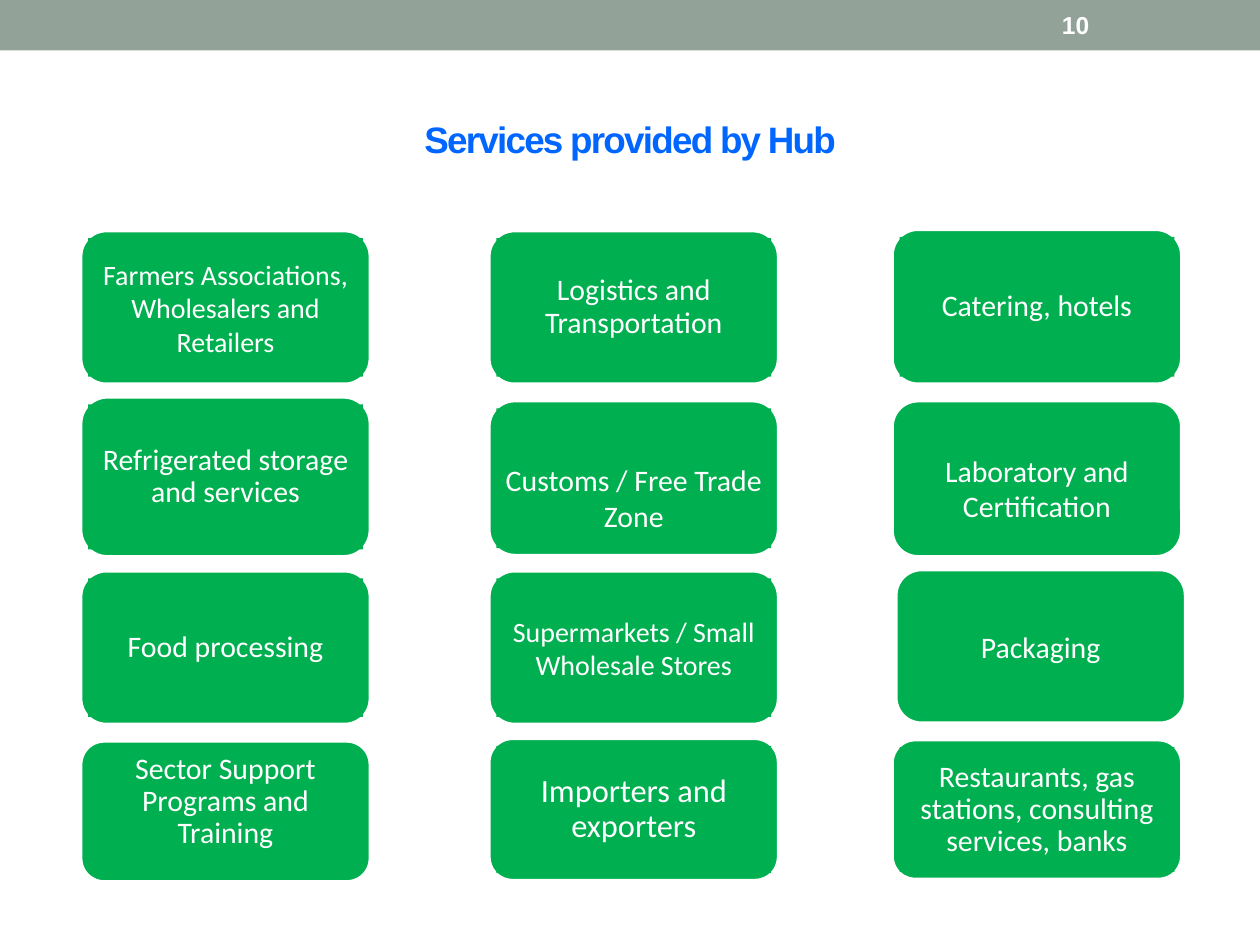
from dataclasses import dataclass

from pptx import Presentation
from pptx.dml.color import RGBColor
from pptx.enum.shapes import MSO_SHAPE
from pptx.enum.text import MSO_ANCHOR, PP_ALIGN
from pptx.util import Inches, Pt

GREEN, WHITE, GREY, BLUE = "00B050", "FFFFFF", "93A299", "0066FF"
WIDTH = 2.3
INSET = 0.06
LEFT, MID, RIGHT = 0.64, 3.88, 7.08


@dataclass
class Card:
    text: str
    left: float
    top: float
    height: float
    size: float = 17
    spacing: float = 0.9
    panel: bool = True  # text sits on an inner panel, centred
    margin: float = 0.03  # space above the text


CARDS = [
    Card("Farmers Associations, Wholesalers and Retailers", LEFT, 1.83, 1.22, 16, 1),
    Card("Refrigerated storage and services", LEFT, 3.15, 1.27),
    Card("Food processing", LEFT, 4.53, 1.22),
    Card("Sector Support Programs and Training", LEFT, 5.88, 1.12,
         panel=False, margin=0.05),
    Card("Logistics and Transportation", MID, 1.83, 1.22),
    Card("Customs / Free Trade Zone", MID, 3.18, 1.23, spacing=1, margin=0.34),
    Card("Supermarkets / Small Wholesale Stores", MID, 4.53, 1.22, 16, 1),
    Card("Importers and exporters", MID, 5.86, 1.13, 18.5),
    Card("Catering, hotels", RIGHT, 1.82, 1.23),
    Card("Laboratory and Certification", RIGHT, 3.18, 1.24, spacing=1,
         panel=False, margin=0.35),
    Card("Packaging", 7.11, 4.52, 1.22, panel=False, margin=0.44),
    Card("Restaurants, gas stations, consulting services, banks",
         RIGHT, 5.87, 1.11),
]


def color(value: str) -> RGBColor:
    return RGBColor.from_string(value)


def style(para, size: float, face: str, shade: str, bold: bool = False) -> None:
    for run in para.runs:
        font = run.font
        font.size, font.name, font.bold = Pt(size), face, bold
        font.color.rgb = color(shade)


def add_box(slide, kind, left: float, top: float, width: float, height: float,
            fill: str, line: bool = False):
    box = slide.shapes.add_shape(
        kind, Inches(left), Inches(top), Inches(width), Inches(height))
    box.shadow.inherit = False
    box.fill.solid()
    box.fill.fore_color.rgb = color(fill)
    if line:
        box.line.color.rgb = color(WHITE)
        box.line.width = Pt(2.08)
    else:
        box.line.fill.background()
    return box


def add_card(slide, card: Card) -> None:
    box = add_box(slide, MSO_SHAPE.ROUNDED_RECTANGLE, card.left, card.top,
                  WIDTH, card.height, GREEN, line=True)
    if card.panel:
        box = add_box(slide, MSO_SHAPE.RECTANGLE, card.left + INSET,
                      card.top + INSET, WIDTH - 2 * INSET,
                      card.height - 2 * INSET, GREEN)
    frame = box.text_frame
    frame.word_wrap = True
    frame.vertical_anchor = MSO_ANCHOR.MIDDLE if card.panel else MSO_ANCHOR.TOP
    frame.margin_left = frame.margin_right = Inches(0.06 if card.panel else 0.1)
    frame.margin_top = Inches(card.margin)
    frame.margin_bottom = Inches(0.03)
    frame.text = card.text
    para = frame.paragraphs[0]
    para.alignment = PP_ALIGN.CENTER
    para.line_spacing = card.spacing
    style(para, card.size, "Calibri", WHITE)


def add_title(slide, text: str) -> None:
    title = slide.shapes.title
    title.left, title.top = Inches(0), Inches(0.54)
    title.width, title.height = Inches(10), Inches(1.12)
    frame = title.text_frame
    frame.text = text
    frame.vertical_anchor = MSO_ANCHOR.MIDDLE
    para = frame.paragraphs[0]
    para.alignment = PP_ALIGN.CENTER
    style(para, 21, "Arial", BLUE, bold=True)
    para.runs[0]._r.get_or_add_rPr().set("spc", "-100")


def add_number(slide, text: str) -> None:
    box = slide.shapes.add_textbox(
        Inches(8.33), Inches(0.02), Inches(1.17), Inches(0.36))
    frame = box.text_frame
    frame.word_wrap = True
    frame.vertical_anchor = MSO_ANCHOR.MIDDLE
    frame.text = text
    style(frame.paragraphs[0], 14, "Arial", WHITE, bold=True)


def main() -> None:
    deck = Presentation()
    deck.slide_width, deck.slide_height = Inches(10), Inches(7.5)
    slide = deck.slides.add_slide(deck.slide_layouts[5])
    add_box(slide, MSO_SHAPE.RECTANGLE, 0, 0, 10, 0.4, GREY)
    add_title(slide, "Services provided by Hub")
    add_number(slide, "10")
    for card in CARDS:
        add_card(slide, card)
    deck.save("out.pptx")


if __name__ == "__main__":
    main()
